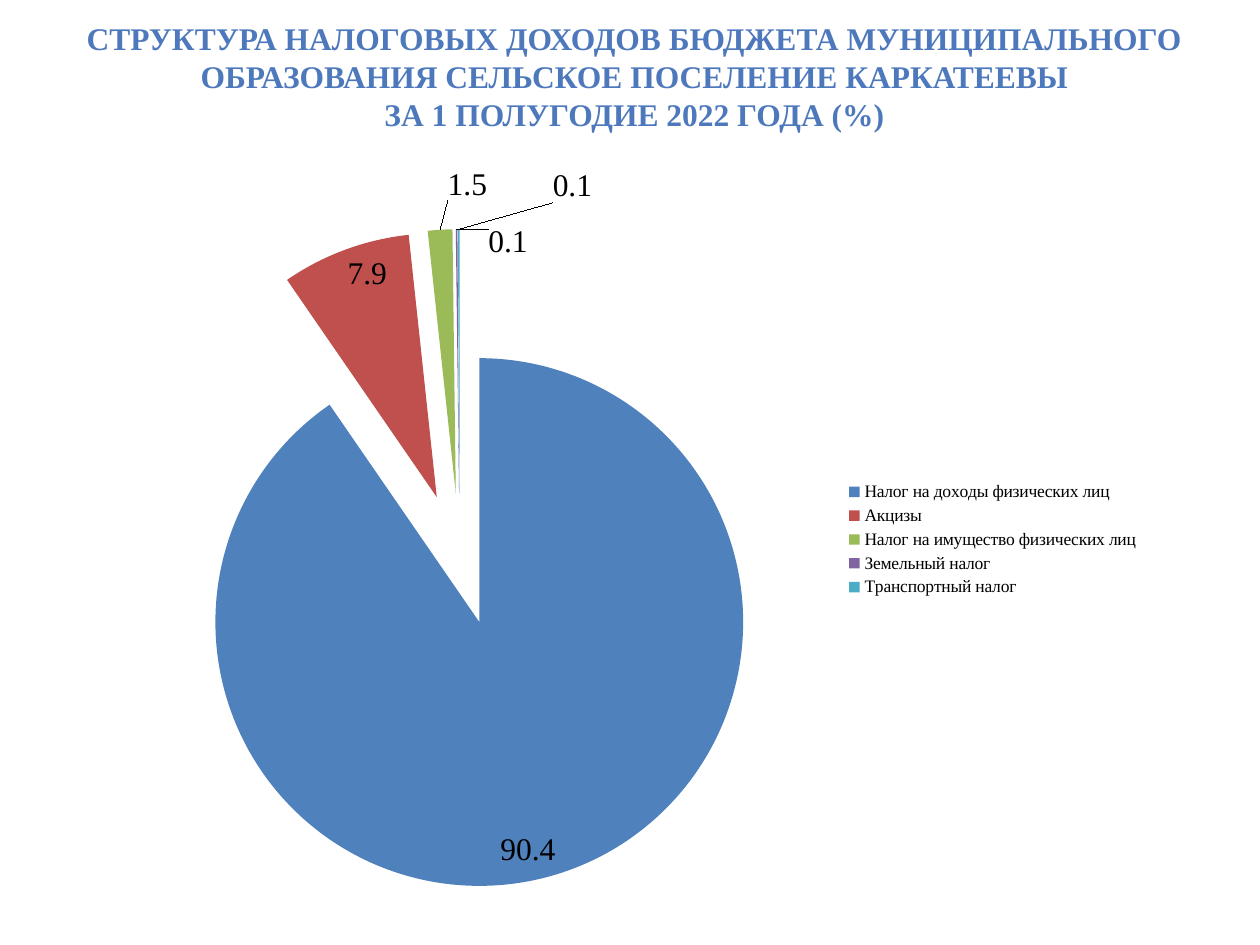
from lxml import etree
from pptx import Presentation
from pptx.chart.data import CategoryChartData
from pptx.dml.color import RGBColor
from pptx.enum.chart import XL_CHART_TYPE, XL_LABEL_POSITION, XL_LEGEND_POSITION
from pptx.enum.text import MSO_ANCHOR, MSO_AUTO_SIZE, PP_ALIGN
from pptx.oxml.ns import qn
from pptx.util import Inches, Pt

PIE = XL_CHART_TYPE.PIE
RIGHT = XL_LEGEND_POSITION.RIGHT
INSIDE_END = XL_LABEL_POSITION.INSIDE_END
OUTSIDE_END = XL_LABEL_POSITION.OUTSIDE_END
MIDDLE = MSO_ANCHOR.MIDDLE
CENTER = PP_ALIGN.CENTER
NO_AUTOFIT = MSO_AUTO_SIZE.NONE

FONT = "Times New Roman"
COLORS = {"title": "4D79BC", "text": "000000"}
TAXES = [  # name, share in percent, slice colour
    ("Налог на доходы физических лиц", 90.4, "4F81BD"),
    ("Акцизы", 7.9, "C0504D"),
    ("Налог на имущество физических лиц", 1.5, "9BBB59"),
    ("Земельный налог", 0.1, "8064A2"),
    ("Транспортный налог", 0.1, "4BACC6"),
]
# Shift of the small slices' labels, in px
LABEL_SHIFTS = {2: (28, -22), 3: (52, 37), 4: (114, -19)}


def px(n):
    return Inches(n / 126)


def rgb(name):
    return RGBColor.from_string(COLORS.get(name, name))


def style(font, size, color="text"):
    font.name = FONT
    font.size = Pt(size)
    font.color.rgb = rgb(color)


def add_layout(after, box, **values):
    """Put a manual layout after an element; box is the chart's px box."""
    layout = etree.Element(qn("c:layout"))
    manual = etree.SubElement(layout, qn("c:manualLayout"))
    for tag, value in values.items():
        if tag in ("x", "w"):
            value = round(value / box[2], 3)
        elif tag in ("y", "h"):
            value = round(value / box[3], 3)
        etree.SubElement(manual, qn(f"c:{tag}")).set("val", str(value))
    after.addnext(layout)


def add_title(slide, box):
    title = slide.shapes.title
    title.left, title.top, title.width, title.height = map(px, box)
    tf = title.text_frame
    tf.word_wrap = True
    tf.auto_size = NO_AUTOFIT
    tf.vertical_anchor = MIDDLE
    p = tf.paragraphs[0]
    p.text = ("СТРУКТУРА НАЛОГОВЫХ ДОХОДОВ БЮДЖЕТА МУНИЦИПАЛЬНОГО "
              "ОБРАЗОВАНИЯ СЕЛЬСКОЕ ПОСЕЛЕНИЕ КАРКАТЕЕВЫ\v"
              "ЗА 1 ПОЛУГОДИЕ 2022 ГОДА (%)")
    p.alignment = CENTER
    style(p.font, 18, "title")
    p.font.bold = True


def add_pie(slide, box):
    data = CategoryChartData(number_format="0.0")
    data.categories = [name for name, _, _ in TAXES]
    data.add_series("Налоговые доходы", [share for _, share, _ in TAXES])
    chart = slide.shapes.add_chart(PIE, *map(px, box), data).chart
    chart.has_title = False
    style(chart.font, 10)

    # Plot area and legend
    plot = chart.plots[0]
    plot.vary_by_categories = True
    plot_area = chart._chartSpace.chart.plotArea
    for old in plot_area.findall(qn("c:layout")):
        plot_area.remove(old)
    marker = etree.Element(qn("c:layout"))
    plot_area.insert(0, marker)
    add_layout(marker, box, layoutTarget="inner", xMode="edge", yMode="edge",
               x=52, y=61, w=660, h=660)
    plot_area.remove(marker)
    chart.has_legend = True
    legend = chart.legend
    legend.position = RIGHT
    legend.include_in_layout = False
    style(legend.font, 10)
    add_layout(legend._element.find(qn("c:legendPos")), box,
               xMode="edge", yMode="edge", x=765, y=310, w=300, h=123)

    # Exploded slices
    series = plot.series[0]
    explosion = etree.Element(qn("c:explosion"))
    explosion.set("val", "25")
    series._element.find(qn("c:tx")).addnext(explosion)
    for i, (_, _, color) in enumerate(TAXES):
        fill = series.points[i].format.fill
        fill.solid()
        fill.fore_color.rgb = rgb(color)

    # Value labels, the small slices' ones moved out on leader lines
    labels = series.data_labels
    labels.show_value = True
    labels.number_format = "0.0"
    labels.number_format_is_linked = False
    labels.position = INSIDE_END
    style(labels.font, 18)
    for i, (dx, dy) in LABEL_SHIFTS.items():
        label = series.points[i].data_label
        style(label.font, 18)
        label.position = OUTSIDE_END
        idx = labels._element.xpath(f"c:dLbl/c:idx[@val='{i}']")[0]
        add_layout(idx, box, x=dx, y=dy)


def main():
    prs = Presentation()
    prs.slide_width, prs.slide_height = px(1260), px(945)
    slide = prs.slides.add_slide(prs.slide_layouts[5])
    add_title(slide, (44, 17, 1181, 118))
    add_pie(slide, (78, 168, 1074, 738))
    prs.save("out.pptx")


if __name__ == "__main__":
    main()
